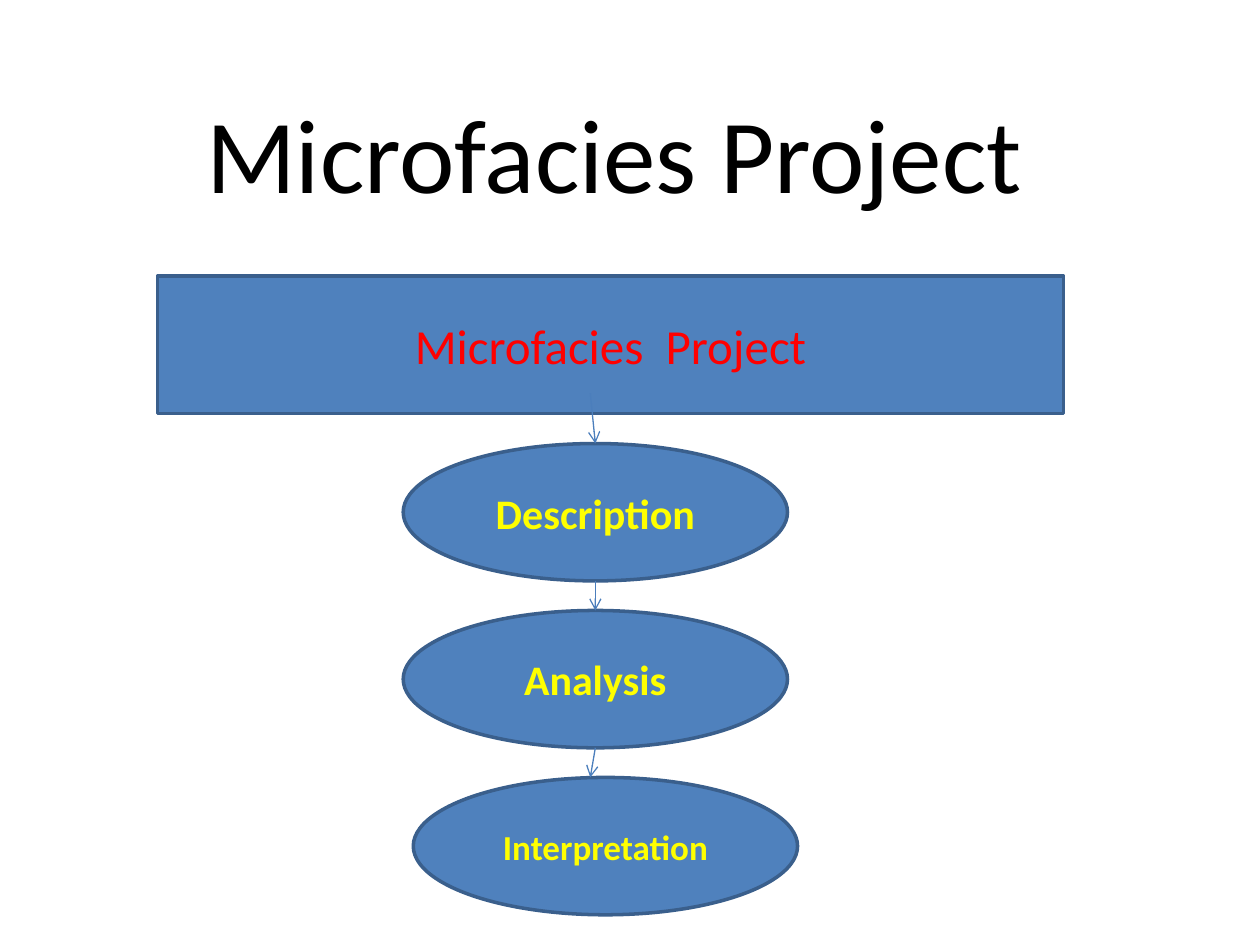
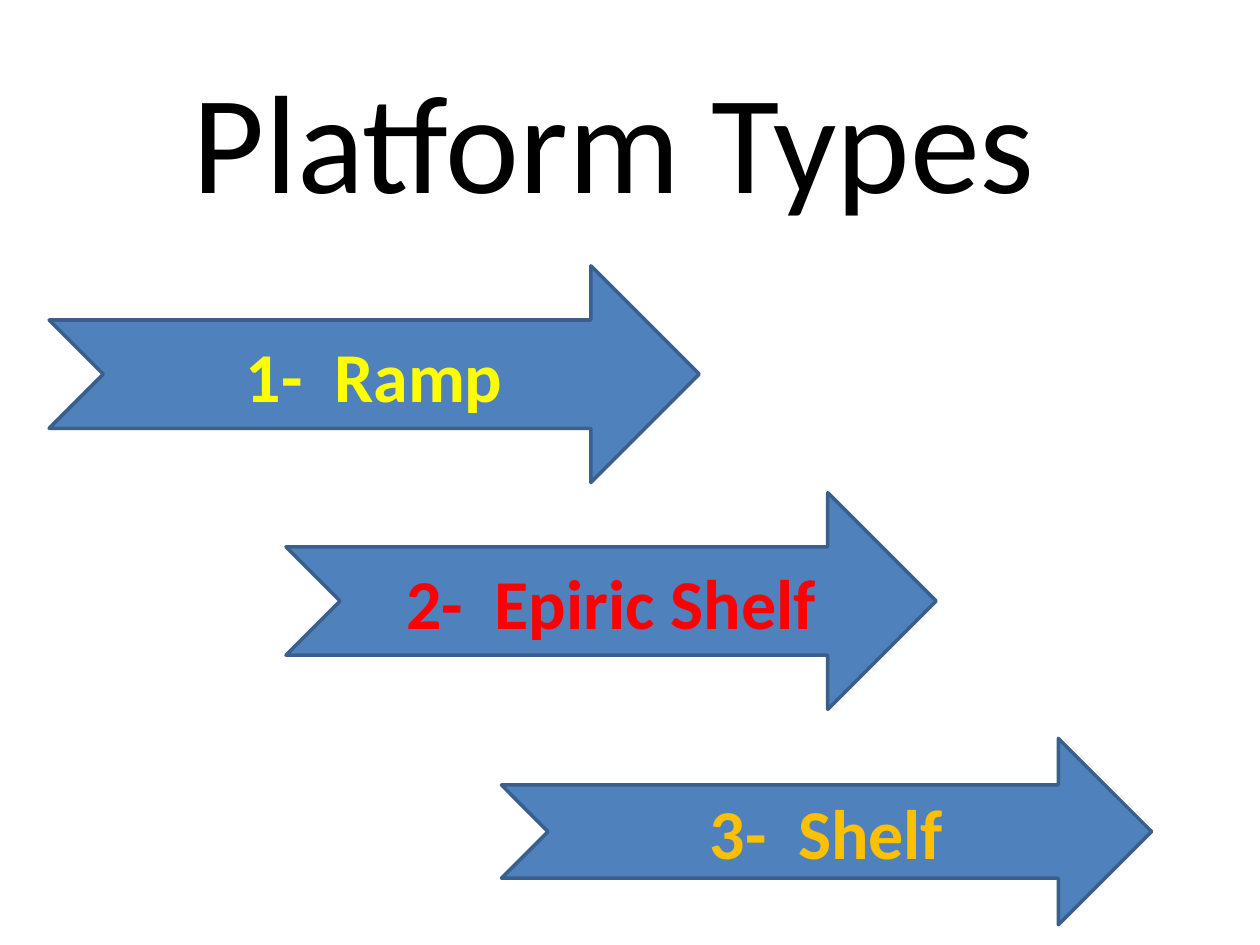
from lxml import etree
from pptx import Presentation
from pptx.dml.color import RGBColor
from pptx.enum.shapes import MSO_CONNECTOR, MSO_SHAPE
from pptx.enum.text import MSO_ANCHOR, MSO_AUTO_SIZE, PP_ALIGN
from pptx.oxml.ns import qn
from pptx.util import Inches, Pt

RECT, OVAL = MSO_SHAPE.RECTANGLE, MSO_SHAPE.OVAL
ARROW = MSO_SHAPE.NOTCHED_RIGHT_ARROW
STRAIGHT = MSO_CONNECTOR.STRAIGHT
CENTER, MIDDLE = PP_ALIGN.CENTER, MSO_ANCHOR.MIDDLE
NO_AUTOFIT = MSO_AUTO_SIZE.NONE
TOP = 0

FONT = "Calibri"
COLORS = {
    "title": "000000", "fill": "4F81BD", "outline": "3A5F8C", "link": "4B7EBC",
    "yellow": "FFFF00", "red": "FF0000", "orange": "FFC000",
}


def rgb(name):
    return RGBColor.from_string(COLORS[name])


def inches(*values):
    return [Inches(v) for v in values]


def write(s, text, size, color, bold=False):
    tf = s.text_frame
    tf.word_wrap = True
    tf.auto_size = NO_AUTOFIT
    tf.vertical_anchor = MIDDLE
    p = tf.paragraphs[0]
    p.alignment = CENTER
    r = p.add_run()
    r.text = text
    r.font.name = FONT
    r.font.size = Pt(size)
    r.font.bold = bold
    r.font.color.rgb = rgb(color)


def add_titled_slide(prs, title, size, height):
    sp = prs.slides.add_slide(prs.slide_layouts[0])
    subtitle = sp.placeholders[1].element
    subtitle.getparent().remove(subtitle)
    s = sp.shapes.title
    s.left, s.top, s.width, s.height = inches(0.58, 0.23, 8.59, height)
    write(s, title, size, "title")
    return sp


def add_block(sp, kind, box, text, size, color, bold=True):
    s = sp.shapes.add_shape(kind, *inches(*box))
    s.shadow.inherit = False
    s.fill.solid()
    s.fill.fore_color.rgb = rgb("fill")
    s.line.color.rgb = rgb("outline")
    s.line.width = Pt(2)
    write(s, text, size, color, bold)
    return s


def add_link(sp, start, end):
    """Draw a thin line with an open arrowhead at its end."""
    c = sp.shapes.add_connector(STRAIGHT, *inches(*start, *end))
    c.line.color.rgb = rgb("link")
    c.line.width = Pt(0.75)
    etree.SubElement(c.line._get_or_add_ln(), qn("a:tailEnd"), type="arrow")
    etree.SubElement(c._element.spPr, qn("a:effectLst"))
    return c


def add_steps(sp, left, top):
    """Stack the project steps, with arrows running down between them."""
    width, height, pitch = 3.05, 1.09, 1.325
    steps = [("Description", 24, 0), ("Analysis", 24, 0), ("Interpretation", 20, 0.08)]
    ovals = [
        add_block(sp, OVAL, (left + shift, top + i * pitch, width, height),
                  text, size, "yellow")
        for i, (text, size, shift) in enumerate(steps)
    ]
    middle = left + width / 2
    offset = middle - 0.04
    starts = [(offset, top - 0.4), (middle, top + height), (middle, top + pitch + height)]
    ends = [(middle, top), (middle, top + pitch), (offset, top + 2 * pitch)]
    links = [add_link(sp, start, end) for start, end in zip(starts, ends)]
    for link, oval in zip(links[:2], ovals):
        link.end_connect(oval, TOP)


def build_project_slide(prs):
    sp = add_titled_slide(prs, "Microfacies Project", 60, 1.95)
    add_block(sp, RECT, (1.25, 2.19, 7.19, 1.09), "Microfacies  Project", 28, "red", False)
    add_steps(sp, 3.2, 3.52)


def build_platform_slide(prs):
    sp = add_titled_slide(prs, "Platform Types", 80, 1.72)
    platforms = [
        ("Ramp", "yellow", 0.39, 2.11, 1.72),
        ("Epiric Shelf", "red", 2.27, 3.91, 1.72),
        ("Shelf", "orange", 3.98, 5.86, 1.48),
    ]
    for number, (name, color, left, top, height) in enumerate(platforms, 1):
        add_block(sp, ARROW, (left, top, 5.16, height), f"{number}-  {name}", 40, color)


def main():
    prs = Presentation()
    prs.slide_width, prs.slide_height = inches(10, 7.5)
    build_project_slide(prs)
    build_platform_slide(prs)
    prs.save("out.pptx")


if __name__ == "__main__":
    main()
